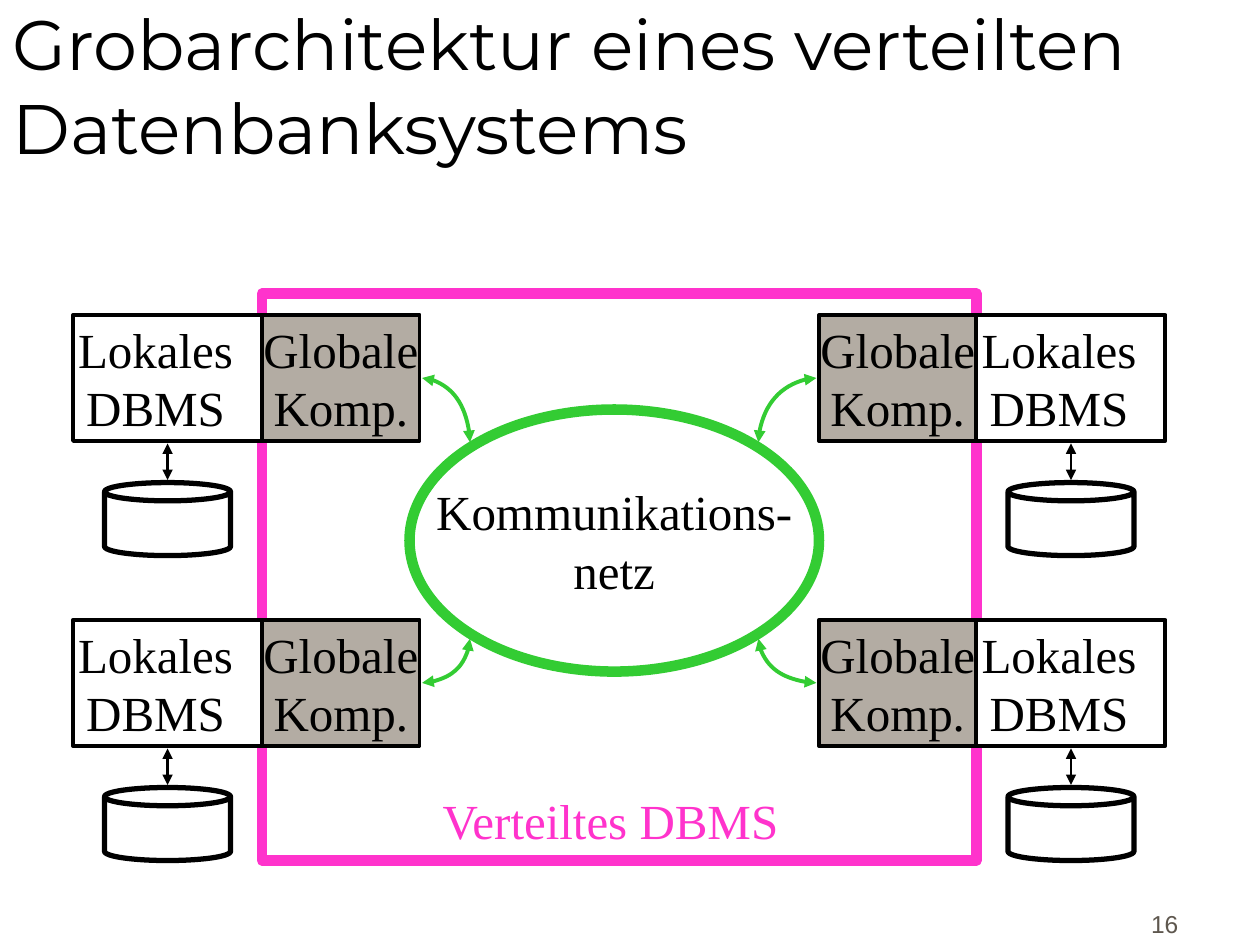
from lxml import etree
from pptx import Presentation
from pptx.dml.color import RGBColor
from pptx.enum.shapes import MSO_CONNECTOR, MSO_SHAPE
from pptx.enum.text import MSO_ANCHOR, PP_ALIGN
from pptx.oxml.ns import qn
from pptx.util import Inches, Pt

RECT, CAN, OVAL = MSO_SHAPE.RECTANGLE, MSO_SHAPE.CAN, MSO_SHAPE.OVAL
STRAIGHT, CURVE = MSO_CONNECTOR.STRAIGHT, MSO_CONNECTOR.CURVE
LEFT, CENTER, RIGHT = PP_ALIGN.LEFT, PP_ALIGN.CENTER, PP_ALIGN.RIGHT
MIDDLE, BOTTOM = MSO_ANCHOR.MIDDLE, MSO_ANCHOR.BOTTOM

COLORS = {
    "black": "000000",
    "white": "FFFFFF",
    "global": "B3ACA3",
    "system": "FF33CC",
    "network": "33CC33",
    "number": "5E574E",
}
SERIF = "Times New Roman"
ROWS = (2.5, 4.92)
LOCAL_WIDTH, GLOBAL_WIDTH, SITE_HEIGHT = 1.5, 1.25, 1
LOCAL_LEFTS = (0.58, 7.75)
GLOBAL_LEFTS = (2.08, 6.5)
CURVE_SITE_X = (3.35, 6.48)
CURVE_NETWORK_X = (3.73, 6.02)
CURVE_NETWORK_Y = (3.51, 5.07)


def rgb(name):
    return RGBColor.from_string(COLORS[name])


def write(frame, lines, size=28, font=SERIF, color="black",
          align=CENTER, anchor=MIDDLE, wrap=False):
    frame.word_wrap = wrap
    frame.vertical_anchor = anchor
    for index, line in enumerate(lines):
        paragraph = frame.paragraphs[0] if index == 0 else frame.add_paragraph()
        paragraph.alignment = align
        run = paragraph.add_run()
        run.text = line
        run.font.size = Pt(size)
        run.font.name = font
        run.font.color.rgb = rgb(color)


def add_text(slide, box, lines, **style):
    label = slide.shapes.add_textbox(*map(Inches, box))
    write(label.text_frame, lines, **style)


def add_outline(slide, kind, box, fill, line, width):
    outline = slide.shapes.add_shape(kind, *map(Inches, box))
    outline.shadow.inherit = False
    if fill:
        outline.fill.solid()
        outline.fill.fore_color.rgb = rgb(fill)
    else:
        outline.fill.background()
    outline.line.color.rgb = rgb(line)
    outline.line.width = Pt(width)
    return outline


def add_component(slide, left, top, width, fill, lines, right_inset=0):
    component = add_outline(slide, RECT, (left, top, width, SITE_HEIGHT),
                            fill, "black", 2.25)
    frame = component.text_frame
    frame.margin_left = 0
    frame.margin_right = Inches(right_inset)
    write(frame, lines)


def add_double_arrow(slide, kind, start, end, color, width):
    arrow = slide.shapes.add_connector(kind, *map(Inches, start + end))
    arrow.line.color.rgb = rgb(color)
    arrow.line.width = Pt(width)
    properties = arrow._element.spPr
    if kind == CURVE:
        properties.find(qn("a:prstGeom")).set("prst", "curvedConnector2")
    stroke = properties.find(qn("a:ln"))
    for tag in ("a:headEnd", "a:tailEnd"):
        etree.SubElement(stroke, qn(tag), type="triangle")
    etree.SubElement(properties, qn("a:effectLst"))


def add_local_site(slide, left, top):
    add_component(slide, left, top, LOCAL_WIDTH, "white",
                  ("Lokales", "DBMS"), right_inset=0.19)
    database = add_outline(slide, CAN, (left + 0.25, top + 1.33, 1, 0.58),
                           "white", "black", 3)
    database.adjustments[0] = 0.25
    center = left + LOCAL_WIDTH / 2
    add_double_arrow(slide, STRAIGHT, (center, top + 1.31),
                     (center, top + 1.02), "black", 1.5)


def main():
    presentation = Presentation()
    presentation.slide_width = Inches(10)
    presentation.slide_height = Inches(7.5)
    slide = presentation.slides.add_slide(presentation.slide_layouts[6])

    add_text(slide, (8.47, 7, 0.98, 0.5), ("16",), size=14, font="Arial",
             color="number", align=RIGHT, anchor=BOTTOM, wrap=True)
    add_text(slide, (0, 0, 9.94, 1.39),
             ("Grobarchitektur eines verteilten Datenbanksystems",),
             size=40, font="Montserrat", align=LEFT, anchor=BOTTOM, wrap=True)
    add_outline(slide, RECT, (2.08, 2.33, 5.67, 4.5), None, "system", 6)

    for top in ROWS:
        for local_left, global_left in zip(LOCAL_LEFTS, GLOBAL_LEFTS):
            add_local_site(slide, local_left, top)
            add_component(slide, global_left, top, GLOBAL_WIDTH, "global",
                          ("Globale", "Komp."))

    network = add_outline(slide, OVAL, (3.25, 3.25, 3.25, 2.08),
                          "white", "network", 6)
    write(network.text_frame, ("Kommunikations-", "netz"))
    for top, network_y in zip(ROWS, CURVE_NETWORK_Y):
        for site_x, network_x in zip(CURVE_SITE_X, CURVE_NETWORK_X):
            add_double_arrow(slide, CURVE, (site_x, top + SITE_HEIGHT / 2),
                             (network_x, network_y), "network", 2.25)

    add_text(slide, (3.39, 6.22, 2.91, 0.57), ("Verteiltes DBMS",),
             color="system")
    presentation.save("out.pptx")


if __name__ == "__main__":
    main()
